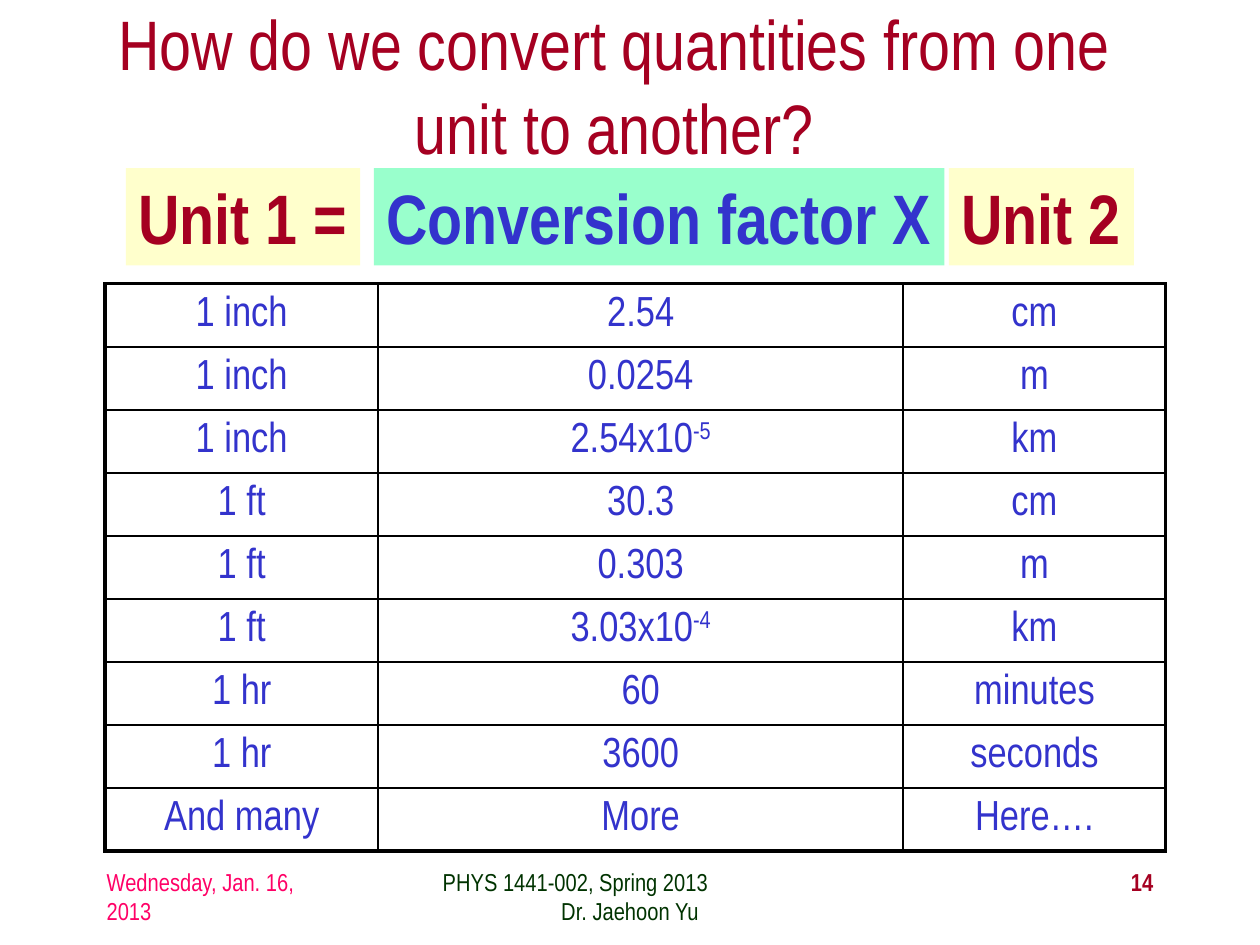
from lxml import etree
from pptx import Presentation
from pptx.dml.color import RGBColor
from pptx.enum.shapes import MSO_SHAPE
from pptx.enum.text import MSO_ANCHOR, MSO_AUTO_SIZE, PP_ALIGN
from pptx.oxml.ns import qn
from pptx.util import Cm, Pt

LEFT, CENTER, RIGHT = PP_ALIGN.LEFT, PP_ALIGN.CENTER, PP_ALIGN.RIGHT
MIDDLE, TOP = MSO_ANCHOR.MIDDLE, MSO_ANCHOR.TOP
RECTANGLE = MSO_SHAPE.RECTANGLE
FIT_SHAPE = MSO_AUTO_SIZE.SHAPE_TO_FIT_TEXT

FONT = "Arial Narrow"
COLORS = {
    "red": "A50021", "blue": "3333CC", "pink": "FF0066", "green": "003300",
    "yellow": "FFFFCC", "mint": "99FFCC", "black": "000000",
}

# Each row: unit 1, factor, unit 2; "^" starts a superscript
CONVERSIONS = [
    ("1 inch", "2.54", "cm"),
    ("1 inch", "0.0254", "m"),
    ("1 inch", "2.54x10^-5", "km"),
    ("1 ft", "30.3", "cm"),
    ("1 ft", "0.303", "m"),
    ("1 ft", "3.03x10^-4", "km"),
    ("1 hr", "60", "minutes"),
    ("1 hr", "3600", "seconds"),
    ("And many", "More", "Here…."),
]
THICK, THIN = Pt(2.25), Pt(1)


def color(name):
    return RGBColor.from_string(COLORS[name])


def style(paragraph, size, color_name, align=LEFT, bold=False):
    paragraph.alignment = align
    font = paragraph.font
    font.name, font.size, font.bold = FONT, Pt(size), bold
    font.color.rgb = color(color_name)


def add_text(slide, box, lines, size, color_name, bold=False, anchor=TOP):
    """Place a text box; lines holds (text, alignment) pairs."""
    frame = slide.shapes.add_textbox(*map(Cm, box)).text_frame
    frame.word_wrap = True
    frame.vertical_anchor = anchor
    for index, (text, align) in enumerate(lines):
        paragraph = frame.add_paragraph() if index else frame.paragraphs[0]
        paragraph.text = text
        style(paragraph, size, color_name, align, bold)


def add_title(slide, box):
    title = "How do we convert quantities from one unit to another?"
    add_text(slide, box, [(title, CENTER)], 40, "red", anchor=MIDDLE)


def add_formula(slide, box):
    left, top, width, height = box
    # Text, offset, width, fill and text colour of each part
    parts = [
        ("Unit 1 =", 0, 4.72, "yellow", "red"),
        ("Unit 2", width - 3.73, 3.73, "yellow", "red"),
        ("Conversion factor X", 5, 11.5, "mint", "blue"),
    ]
    for text, offset, part_width, fill, text_color in parts:
        shape = slide.shapes.add_shape(
            RECTANGLE, Cm(left + offset), Cm(top), Cm(part_width), Cm(height))
        shape.shadow.inherit = False
        shape.fill.solid()
        shape.fill.fore_color.rgb = color(fill)
        shape.line.fill.background()
        frame = shape.text_frame
        frame.word_wrap = False
        frame.auto_size = FIT_SHAPE
        frame.vertical_anchor = TOP
        paragraph = frame.paragraphs[0]
        paragraph.text = text
        style(paragraph, 40, text_color, bold=True)


def set_borders(cell, widths):
    """Draw the cell's borders: left, right, top, bottom."""
    properties = cell._tc.get_or_add_tcPr()
    for side, width in zip("LRTB", widths):
        line = etree.SubElement(properties, qn(f"a:ln{side}"), w=str(width))
        fill = etree.SubElement(line, qn("a:solidFill"))
        etree.SubElement(fill, qn("a:srgbClr"), val=COLORS["black"])


def add_conversion_table(slide, box):
    left, top, width, height = box
    row_count, column_count = len(CONVERSIONS), len(CONVERSIONS[0])
    table = slide.shapes.add_table(
        row_count, column_count, Cm(left), Cm(top), Cm(width), Cm(height)).table
    table.first_row = table.horz_banding = False
    for column, share in zip(table.columns, (26, 50, 25)):
        column.width = Cm(width * share / 101)
    for row_index, values in enumerate(CONVERSIONS):
        table.rows[row_index].height = Cm(height / row_count)
        for column_index, value in enumerate(values):
            cell = table.cell(row_index, column_index)
            outer_sides = (column_index == 0, column_index == column_count - 1,
                           row_index == 0, row_index == row_count - 1)
            set_borders(cell, [THICK if outer else THIN for outer in outer_sides])
            cell.fill.background()
            cell.vertical_anchor = MIDDLE
            paragraph = cell.text_frame.paragraphs[0]
            base, _, exponent = value.partition("^")
            paragraph.add_run().text = base
            if exponent:
                run = paragraph.add_run()
                run.text = exponent
                run.font._element.set("baseline", "30000")
            style(paragraph, 24, "blue", CENTER)


def add_footer(slide, box):
    left, top, width, height = box
    side_width, center_width = 5.29, 8.05
    add_text(slide, (left, top, side_width, height),
             [("Wednesday, Jan. 16, 2013", LEFT)], 14, "pink")
    add_text(slide, (left + (width - center_width) / 2, top, center_width, height),
             [("PHYS 1441-002, Spring 2013", LEFT), ("Dr. Jaehoon Yu", CENTER)],
             14, "green")
    add_text(slide, (left + width - side_width, top, side_width, height),
             [("14", RIGHT)], 14, "red", bold=True)


def main():
    presentation = Presentation()
    presentation.slide_width, presentation.slide_height = Cm(25.4), Cm(19.05)
    slide = presentation.slides.add_slide(presentation.slide_layouts[6])
    add_footer(slide, (1.9, 17.35, 21.6, 1.27))
    add_title(slide, (1.9, 0, 20.96, 3.39))
    add_formula(slide, (2.54, 3.39, 20.32, 1.96))
    add_conversion_table(slide, (2.12, 5.72, 21.38, 11.43))
    presentation.save("out.pptx")


if __name__ == "__main__":
    main()
